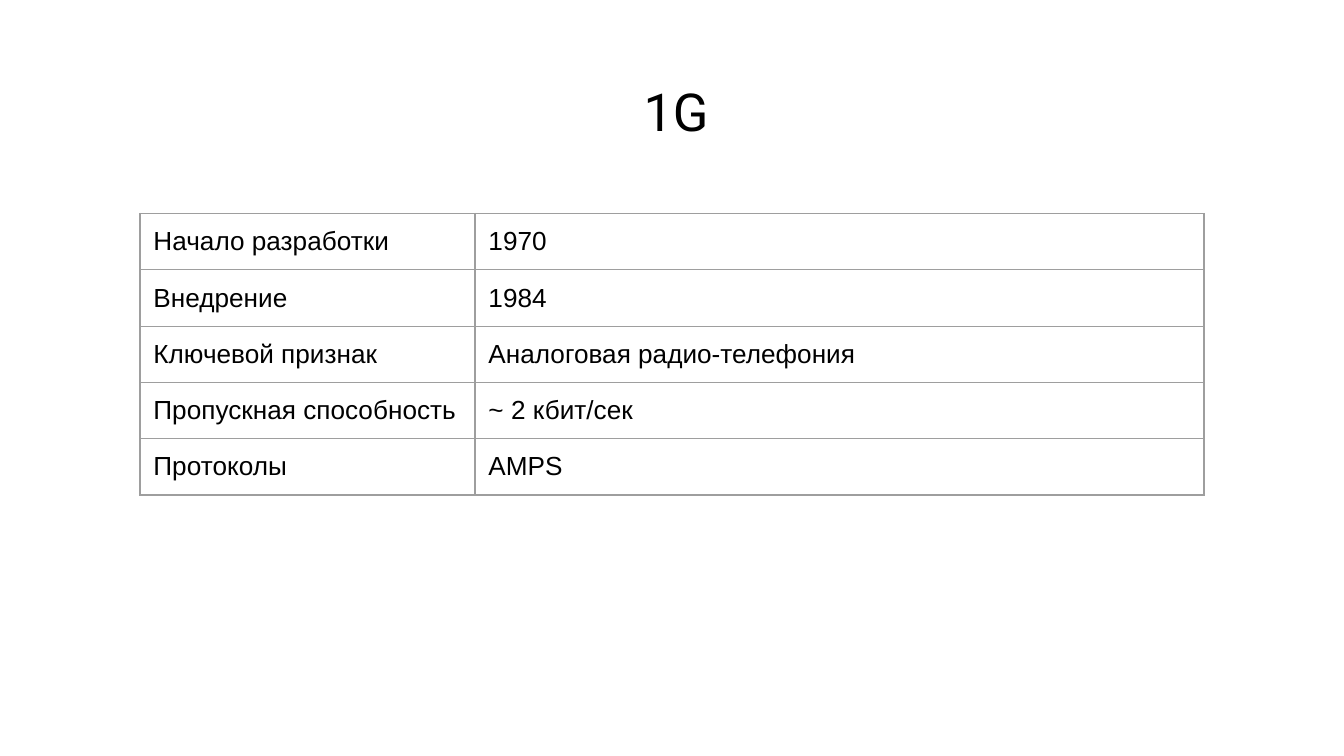
from lxml import etree
from pptx import Presentation
from pptx.dml.color import RGBColor
from pptx.enum import text
from pptx.oxml import ns
from pptx.util import Pt

TITLE = "1G"
FACTS = [
    ("Начало разработки", "1970"),
    ("Внедрение", "1984"),
    ("Ключевой признак", "Аналоговая радио-телефония"),
    ("Пропускная способность", "~ 2 кбит/сек"),
    ("Протоколы", "AMPS"),
]
BLACK = RGBColor(0, 0, 0)
GRAY = RGBColor(0x9E, 0x9E, 0x9E)
COLUMN_WIDTHS = (179.5, 390.5)
ROW_HEIGHT = 30
INSET = Pt(7.2)
BORDER = Pt(0.75)


def write(para, words, font, size):
    span = para.add_run()
    span.text = words
    span.font.name = font
    span.font.size = Pt(size)
    span.font.color.rgb = BLACK


def set_insets(target):
    target.margin_left = target.margin_right = INSET
    target.margin_top = target.margin_bottom = INSET


def add_borders(cell):
    props = cell.fill._xPr
    for index, side in enumerate(("lnL", "lnR", "lnT", "lnB")):
        line = etree.Element(ns.qn(f"a:{side}"), w=str(BORDER))
        fill = etree.SubElement(line, ns.qn("a:solidFill"))
        etree.SubElement(fill, ns.qn("a:srgbClr"), val=str(GRAY))
        props.insert(index, line)


deck = Presentation()
deck.slide_width, deck.slide_height = Pt(720), Pt(405)
page = deck.slides.add_slide(deck.slide_layouts[5])

title = page.shapes.title
title.left, title.top, title.width, title.height = Pt(28.8), Pt(35.3), Pt(666.7), Pt(45.4)
frame = title.text_frame
frame.word_wrap = True
frame.auto_size = text.MSO_AUTO_SIZE.NONE
frame.vertical_anchor = text.MSO_ANCHOR.TOP
set_insets(frame)
frame.paragraphs[0].alignment = text.PP_ALIGN.CENTER
write(frame.paragraphs[0], TITLE, "Roboto", 28)

table = page.shapes.add_table(
    len(FACTS), len(COLUMN_WIDTHS), Pt(75), Pt(114.4),
    Pt(sum(COLUMN_WIDTHS)), Pt(ROW_HEIGHT * len(FACTS)),
).table
table.first_row = table.horz_banding = False
for column, width in zip(table.columns, COLUMN_WIDTHS):
    column.width = Pt(width)
for row, facts in zip(table.rows, FACTS):
    row.height = Pt(ROW_HEIGHT)
    for cell, words in zip(row.cells, facts):
        set_insets(cell)
        cell.fill.background()
        add_borders(cell)
        write(cell.text_frame.paragraphs[0], words, "Arial", 14)

deck.save("out.pptx")
